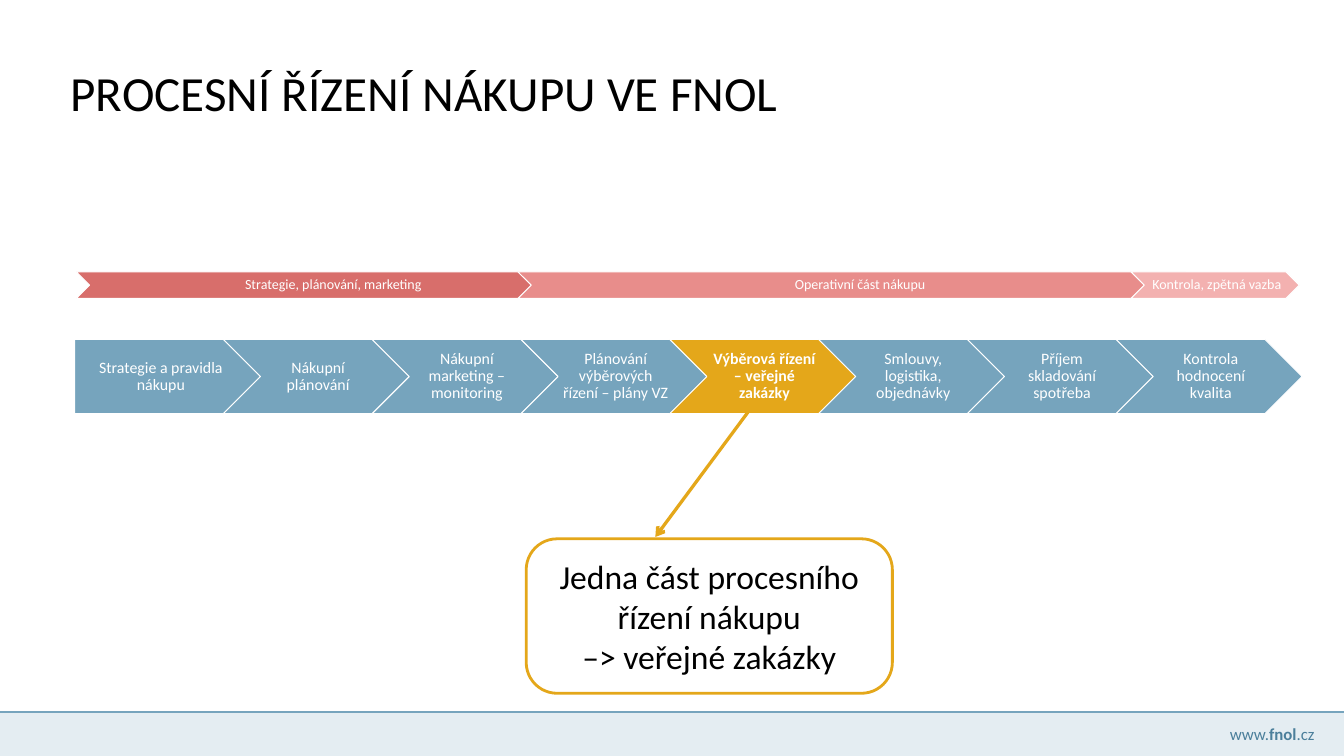
import pptx
import pptx.util
import pptx.dml.color
import pptx.enum.shapes
import pptx.enum.text
import pptx.oxml.ns
import lxml.etree

Cm = pptx.util.Cm
Pt = pptx.util.Pt
Kind = pptx.enum.shapes.MSO_SHAPE
Align = pptx.enum.text.PP_ALIGN
Anchor = pptx.enum.text.MSO_ANCHOR

BLUE, GOLD, WHITE, BLACK = "76A4BD", "E4A71A", "FFFFFF", "000000"


def tint(code):
    return pptx.dml.color.RGBColor.from_string(code)


def apply(item, form):
    for key, value in form.items():
        setattr(item, key, value)


class Deck:
    font = "Calibri"

    def __init__(self, wide, high):
        self.show = pptx.Presentation()
        apply(self.show, {"slide_width": Cm(wide), "slide_height": Cm(high)})
        self.slide = self.show.slides.add_slide(self.show.slide_layouts[5])

    def fill_text(self, frame, lines, size, color, align, space=1.0, pad=(0.25, 0.13, 0.25, 0.13)):
        sides = ("margin_left", "margin_top", "margin_right", "margin_bottom")
        apply(frame, dict(zip(sides, map(Cm, pad))))
        apply(frame, {"word_wrap": True, "vertical_anchor": Anchor.MIDDLE})
        for index, runs in enumerate(lines):
            para = frame.add_paragraph() if index else frame.paragraphs[0]
            apply(para, {"alignment": align, "line_spacing": space})
            for text, bold in runs:
                run = para.add_run()
                run.text = text
                apply(run.font, {"name": self.font, "size": Pt(size), "bold": bold})
                run.font.color.rgb = tint(color)

    def title(self, text, box, size):
        head = self.slide.shapes.title
        apply(head, dict(zip(("left", "top", "width", "height"), map(Cm, box))))
        self.fill_text(head.text_frame, [[(text, False)]], size, BLACK, Align.LEFT,
                       0.9, (0.13, 0.13, 0.13, 0.13))

    def shape(self, kind, box, fill, line=None, width=1):
        item = self.slide.shapes.add_shape(kind, *map(Cm, box))
        item.shadow.inherit = False
        item.fill.solid()
        item.fill.fore_color.rgb = tint(fill)
        if line:
            item.line.color.rgb = tint(line)
            item.line.width = Pt(width)
        else:
            item.line.fill.background()
        return item

    def step(self, kind, box, fill, text, size, pad, bold=False):
        item = self.shape(kind, box, fill, WHITE)
        self.fill_text(item.text_frame, [[(text, bold)]], size, WHITE, Align.CENTER, 0.9, pad)

    def label(self, box, runs, size, color, align):
        item = self.slide.shapes.add_textbox(*map(Cm, box))
        self.fill_text(item.text_frame, [runs], size, color, align)

    def line(self, ends, color, width, arrow=False):
        item = self.slide.shapes.add_connector(
            pptx.enum.shapes.MSO_CONNECTOR.STRAIGHT, *map(Cm, ends))
        item.line.color.rgb = tint(color)
        item.line.width = Pt(width)
        form = item._element.spPr
        if arrow:
            tail = lxml.etree.SubElement(form.find(pptx.oxml.ns.qn("a:ln")),
                                         pptx.oxml.ns.qn("a:tailEnd"))
            tail.set("type", "arrow")
        lxml.etree.SubElement(form, pptx.oxml.ns.qn("a:effectLst"))


def main():
    deck = Deck(50.8, 28.58)
    deck.title("PROCESNÍ ŘÍZENÍ NÁKUPU VE FNOL", (2.54, 2.36, 37.85, 2.54), 52.6)

    steps = [
        "Strategie a pravidla nákupu",
        "Nákupní plánování",
        "Nákupní marketing – monitoring",
        "Plánování výběrových řízení – plány VZ",
        "Výběrová řízení – veřejné zakázky",
        "Smlouvy, logistika, objednávky",
        "Příjem skladování spotřeba",
        "Kontrola hodnocení kvalita",
    ]
    focus, wide = 4, 7.03
    for index, text in enumerate(steps):
        hot = index == focus
        deck.step(Kind.CHEVRON if index else Kind.PENTAGON,
                  (2.82 + index * wide * 0.8, 12.83, wide, 2.81),
                  GOLD if hot else BLUE, text, 17,
                  (0.18 if index else 0.25, 0.13, 0.05, 0.13), hot)

    phases = [
        (2.89, 19.29, "D86E6B", "Strategie, plánování, marketing"),
        (19.58, 25.73, "E88D8B", "Operativní část nákupu"),
        (42.75, 6.36, "F3B1B0", "Kontrola, zpětná vazba"),
    ]
    for left, width, fill, text in phases:
        deck.step(Kind.CHEVRON, (left, 10.28, width, 1), fill, text, 15,
                  (0.18, 0.05, 0.05, 0.05))

    deck.line((28.45, 15.34, 24.77, 20.3), GOLD, 3.5, True)
    note = deck.shape(Kind.ROUNDED_RECTANGLE, (19.89, 20.37, 13.84, 5.84), WHITE, GOLD, 3)
    note.adjustments[0] = 0.2
    deck.fill_text(note.text_frame,
                   [[("Jedna část procesního řízení nákupu", False)],
                    [("–> veřejné zakázky", False)]],
                   36, BLACK, Align.CENTER)

    deck.shape(Kind.RECTANGLE, (0, 26.95, 50.8, 1.63), "E4EDF2")
    deck.label((44.02, 27.23, 5.92, 1.02),
               [("www.", False), ("fnol", True), (".cz", False)], 18, "4B7F9B", Align.RIGHT)
    deck.line((0, 26.92, 50.8, 26.92), BLUE, 1.5)
    deck.show.save("out.pptx")


if __name__ == "__main__":
    main()
